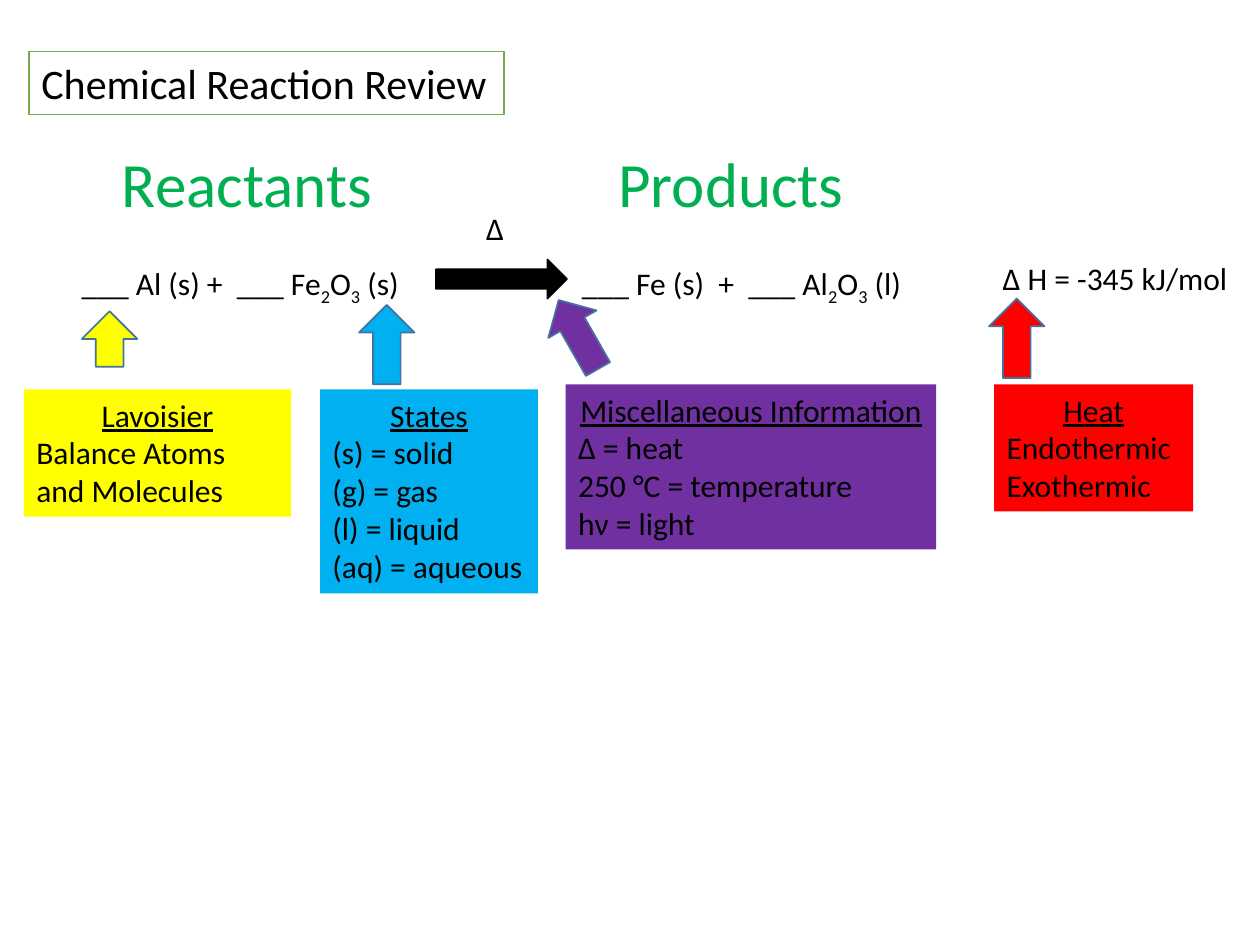
from pptx import Presentation
from pptx.dml.color import RGBColor
from pptx.enum.shapes import MSO_SHAPE as Preset
from pptx.enum.text import MSO_AUTO_SIZE as AutoSize, PP_ALIGN as Align
from pptx.util import Inches, Pt

THEME = {
    "font": "Calibri",
    "title": 24, "heading": 36, "body": 18, "outline": 1,
    "black": RGBColor(0x00, 0x00, 0x00), "white": RGBColor(0xFF, 0xFF, 0xFF),
    "green": RGBColor(0x00, 0xB0, 0x50), "frame": RGBColor(0x70, 0xAD, 0x47),
    "yellow": RGBColor(0xFF, 0xFF, 0x00), "blue": RGBColor(0x00, 0xB0, 0xF0),
    "purple": RGBColor(0x70, 0x30, 0xA0), "red": RGBColor(0xFF, 0x00, 0x00),
    "edge": RGBColor(0x43, 0x73, 0x9E),
}

deck = Presentation()
deck.slide_width, deck.slide_height = Inches(10), Inches(7.5)
slide = deck.slides.add_slide(deck.slide_layouts[6])
COL, ROW = deck.slide_width / 100, deck.slide_height / 75


def add_text(place, paragraphs, size="body", color="black", wrap=False, card=False):
    left, top, width, height = place
    box = slide.shapes.add_textbox(
        int(left * COL), int(top * ROW), int(width * COL), int(height * ROW))
    frame = box.text_frame
    frame.word_wrap = wrap
    frame.auto_size = AutoSize.SHAPE_TO_FIT_TEXT
    for line, pieces in enumerate(paragraphs):
        paragraph = frame.paragraphs[0] if line == 0 else frame.add_paragraph()
        is_heading = card and line == 0
        paragraph.alignment = Align.CENTER if is_heading else Align.LEFT
        for position, piece in enumerate(pieces):
            run = paragraph.add_run()
            run.text = piece
            run.font.name = THEME["font"]
            run.font.size = Pt(THEME[size])
            run.font.color.rgb = THEME[color]
            run.font.underline = is_heading
            if position % 2:
                run.font._element.set("baseline", "-25000")
    return box


def add_arrow(preset, place, fill, edge, turn=0):
    left, top, width, height = place
    arrow = slide.shapes.add_shape(
        preset, int(left * COL), int(top * ROW), int(width * COL), int(height * ROW))
    arrow.shadow.inherit = False
    arrow.fill.solid()
    arrow.fill.fore_color.rgb = THEME[fill]
    arrow.line.color.rgb = THEME[edge]
    arrow.line.width = Pt(THEME["outline"])
    arrow.rotation = turn


title = add_text((2.3, 4.1, 37.7, 5), [["Chemical Reaction Review"]], size="title")
title.fill.solid()
title.fill.fore_color.rgb = THEME["white"]
title.line.color.rgb = THEME["frame"]
title.line.width = Pt(THEME["outline"])

for left, width, side in [(8.7, 22, "Reactants"), (48.1, 20.1, "Products")]:
    add_text((left, 11, width, 7.1), [[side]], size="heading", color="green")

equation = [
    (5.5, 20.5, 27.8, ["___ Al (s) +  ___ Fe", "2", "O", "3", " (s)"]),
    (45.2, 20.5, 27.9, ["___ Fe (s)  +  ___ Al", "2", "O", "3", " (l)"]),
    (37.6, 16.1, 3.4, ["Δ"]),
    (78.6, 20.1, 20.1, ["Δ H = -345 kJ/mol"]),
]
for left, top, width, pieces in equation:
    add_text((left, top, width, 4), [pieces])
add_arrow(Preset.RIGHT_ARROW, (34.6, 20.6, 10.4, 3.1), "black", "black")

topics = [
    ("yellow", (1.9, 30.9, 21.2, 10.1), (6.5, 24.7, 4.4, 4.4), 0,
     ["Lavoisier", "Balance Atoms and Molecules"]),
    ("blue", (25.4, 30.9, 17.3, 16.2), (28.5, 24.2, 4.4, 6.3), 0,
     ["States", "(s) = solid", "(g) = gas", "(l) = liquid", "(aq) = aqueous"]),
    ("purple", (44.9, 30.5, 29.4, 13.1), (43.7, 23.4, 4.4, 6.3), 330.3,
     ["Miscellaneous Information", "Δ = heat", "250 °C = temperature", "hν = light"]),
    ("red", (78.9, 30.5, 15.8, 10.1), (78.5, 23.7, 4.4, 6.3), 0,
     ["Heat", "Endothermic", "Exothermic"]),
]
for color, card_place, arrow_place, turn, lines in topics:
    card = add_text(card_place, [[line] for line in lines],
                    wrap=color == "yellow", card=True)
    card.fill.solid()
    card.fill.fore_color.rgb = THEME[color]
    add_arrow(Preset.UP_ARROW, arrow_place, color, "edge", turn)

deck.save("out.pptx")
